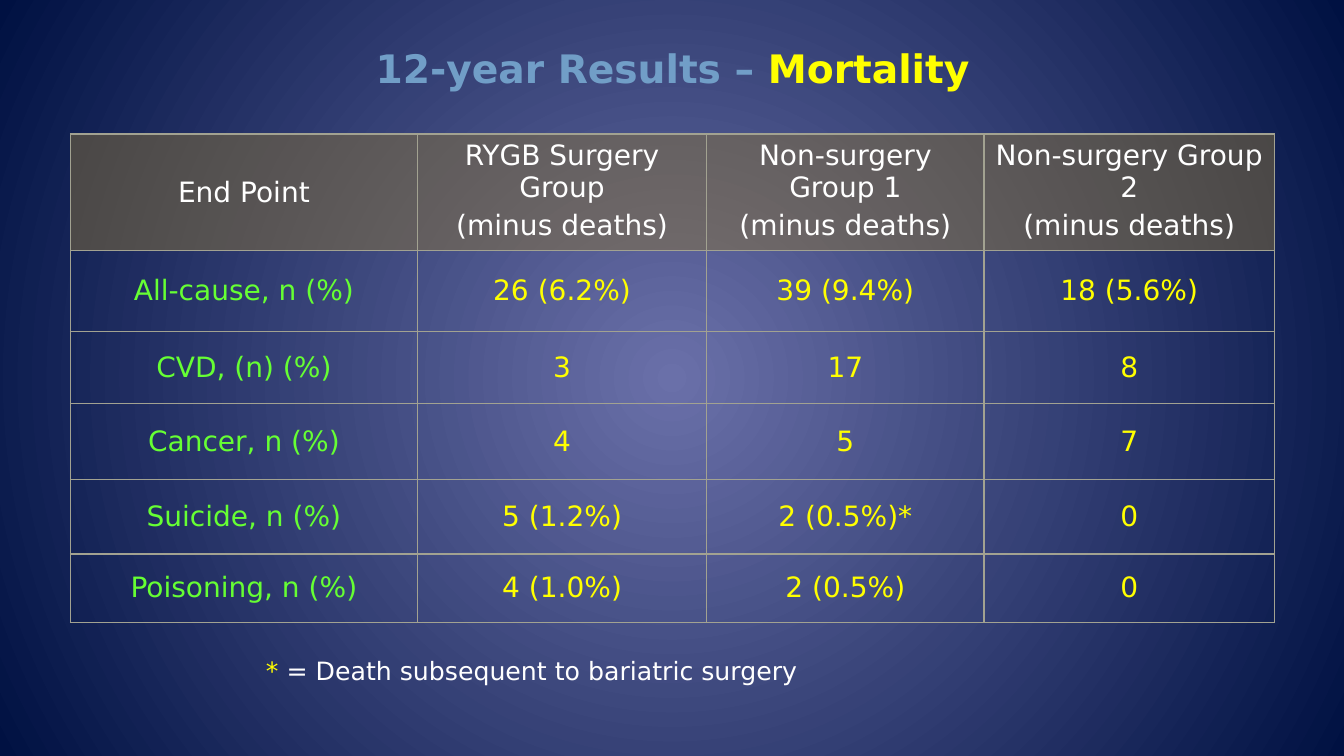
import pptx
import pptx.dml.color
import pptx.enum.text
import pptx.oxml
import pptx.oxml.ns
import pptx.util
from pptx.util import Inches

COLORS = {"glow": "6A70A9", "navy": "001142", "blue": "719EC7", "yellow": "FFFF00",
          "white": "FFFFFF", "green": "66FF33", "header": "84703C", "border": "A2A291"}
FONT = "DejaVu Sans"
A_NS = pptx.oxml.ns.nsdecls("a")
CENTER = pptx.enum.text.PP_ALIGN.CENTER
MIDDLE = pptx.enum.text.MSO_ANCHOR.MIDDLE
TOP = pptx.enum.text.MSO_ANCHOR.TOP

COLUMNS = [3.44, 2.87, 2.75, 2.88]
ROWS = [1.13, 0.8, 0.72, 0.75, 0.74, 0.68]
MORTALITY = [
    ["End Point", "RYGB Surgery Group\n(minus deaths)",
     "Non-surgery Group 1\n(minus deaths)", "Non-surgery Group 2\n(minus deaths)"],
    ["All-cause, n (%)", "26 (6.2%)", "39 (9.4%)", "18 (5.6%)"],
    ["CVD, (n) (%)", "3", "17", "8"],
    ["Cancer, n (%)", "4", "5", "7"],
    ["Suicide, n (%)", "5 (1.2%)", "2 (0.5%)*", "0"],
    ["Poisoning, n (%)", "4 (1.0%)", "2 (0.5%)", "0"],
]


def rgb(name):
    return pptx.dml.color.RGBColor.from_string(COLORS[name])


def apply(target, values):
    for name, value in values.items():
        setattr(target, name, value)


def add_run(p, text, color, size, bold=False):
    r = p.add_run()
    r.text = text
    apply(r.font, {"name": FONT, "size": pptx.util.Pt(size), "bold": bold})
    r.font.color.rgb = rgb(color)


def paint_background(s):
    fill = s.background.fill
    fill.gradient()
    for stop, color, position in zip(fill.gradient_stops, ("glow", "navy"), (0, 1)):
        stop.color.rgb = rgb(color)
        stop.position = position
    lin = s.background._cSld.find(".//" + pptx.oxml.ns.qn("a:lin"))
    lin.getparent().replace(lin, pptx.oxml.parse_xml(
        f'<a:path {A_NS} path="circle">'
        '<a:fillToRect l="50000" t="50000" r="50000" b="50000"/></a:path>'))


def add_line(s, box, parts, size, paragraph, bold=False):
    tf = s.shapes.add_textbox(*map(Inches, box)).text_frame
    apply(tf, {"word_wrap": True, "vertical_anchor": TOP})
    p = tf.paragraphs[0]
    apply(p, paragraph)
    for text, color in parts:
        add_run(p, text, color, size, bold)


def add_borders(cell):
    tcPr = cell._tc.get_or_add_tcPr()
    for i, side in enumerate(("lnL", "lnR", "lnT", "lnB")):
        tcPr.insert(i, pptx.oxml.parse_xml(
            f'<a:{side} {A_NS} w="12700"><a:solidFill>'
            f'<a:srgbClr val="{COLORS["border"]}"/></a:solidFill></a:{side}>'))


def fill_header(cell):
    cell.fill.solid()
    cell.fill.fore_color.rgb = rgb("header")
    color = cell._tc.tcPr.find(".//" + pptx.oxml.ns.qn("a:srgbClr"))
    color.append(pptx.oxml.parse_xml(f'<a:alpha {A_NS} val="50000"/>'))


def add_cell(cell, text, color, anchor):
    cell.vertical_anchor = anchor
    tf = cell.text_frame
    for i, line in enumerate(text.split("\n")):
        p = tf.add_paragraph() if i else tf.paragraphs[0]
        apply(p, {"alignment": CENTER, "space_before": pptx.util.Pt(4)})
        add_run(p, line, color, 20)


def add_mortality_table(s, box):
    table = s.shapes.add_table(len(ROWS), len(COLUMNS), *map(Inches, box)).table
    apply(table, {"first_row": False, "horz_banding": False})
    for column, width in zip(table.columns, COLUMNS):
        column.width = Inches(width)
    for row, height in zip(table.rows, ROWS):
        row.height = Inches(height)
    for i, values in enumerate(MORTALITY):
        for j, text in enumerate(values):
            cell = table.cell(i, j)
            if i == 0:
                fill_header(cell)
                add_cell(cell, text, "white", TOP if j else MIDDLE)
            else:
                cell.fill.background()
                add_cell(cell, text, "yellow" if j else "green", MIDDLE)
            add_borders(cell)


def main():
    prs = pptx.Presentation()
    apply(prs, {"slide_width": Inches(13.33), "slide_height": Inches(7.5)})
    s = prs.slides.add_slide(prs.slide_layouts[6])
    paint_background(s)
    add_line(s, (2.42, 0.44, 8.5, 0.63),
             [("12-year Results – ", "blue"), ("Mortality", "yellow")],
             28, {"alignment": CENTER, "line_spacing": 0.9}, True)
    add_mortality_table(s, (0.7, 1.33, sum(COLUMNS), sum(ROWS)))
    add_line(s, (2.54, 6.45, 6.97, 0.4),
             [("* ", "yellow"), ("= Death subsequent to bariatric surgery", "white")], 18, {})
    prs.save("out.pptx")


if __name__ == "__main__":
    main()
